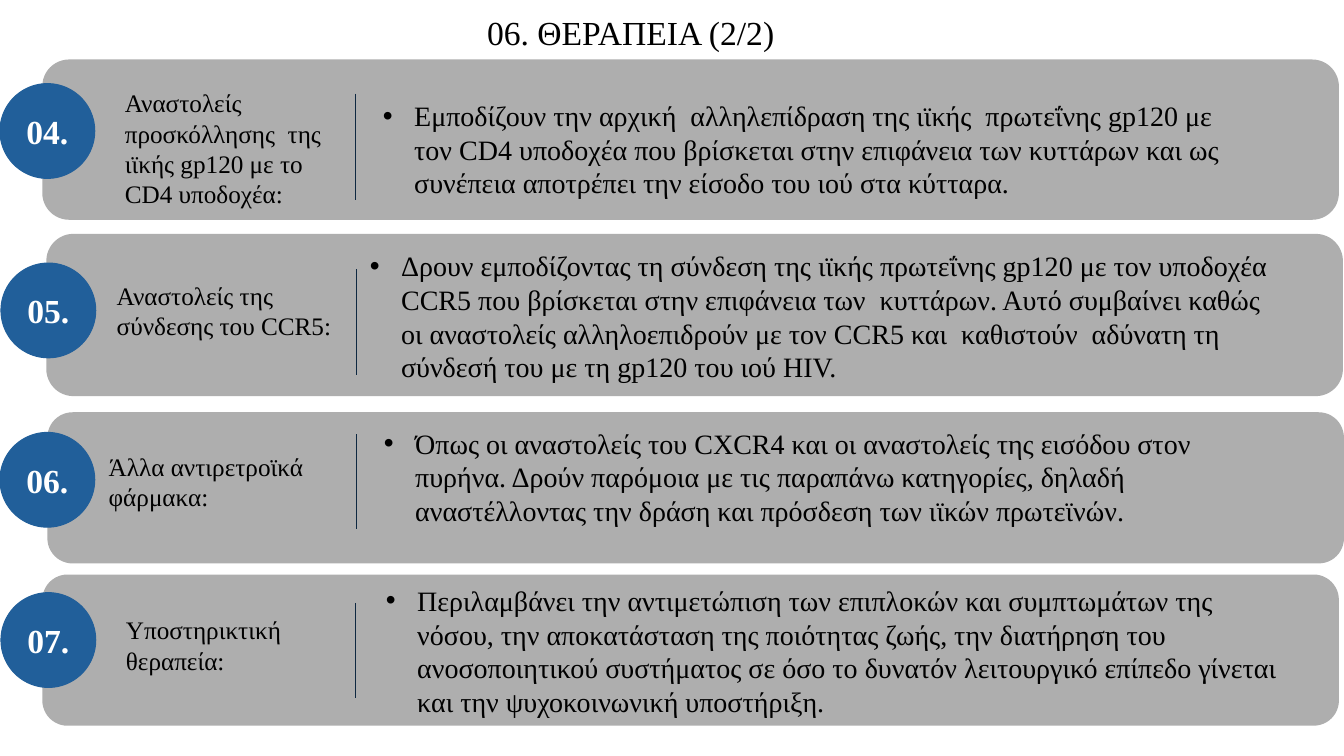
from dataclasses import dataclass

from lxml import etree
from pptx import Presentation
from pptx.dml.color import RGBColor
from pptx.enum.shapes import MSO_CONNECTOR, MSO_SHAPE
from pptx.enum.text import MSO_ANCHOR, PP_ALIGN
from pptx.oxml.ns import qn
from pptx.slide import Slide
from pptx.text.text import TextFrame
from pptx.util import Inches, Pt

ROUNDED = MSO_SHAPE.ROUNDED_RECTANGLE
OVAL = MSO_SHAPE.OVAL
STRAIGHT = MSO_CONNECTOR.STRAIGHT
TOP, MIDDLE = MSO_ANCHOR.TOP, MSO_ANCHOR.MIDDLE
LEFT, CENTER = PP_ALIGN.LEFT, PP_ALIGN.CENTER


@dataclass(frozen=True)
class Theme:
    font: str = "Times New Roman"
    heading_size: int = 24
    label_size: int = 18
    body_size: int = 20
    text: RGBColor = RGBColor(0, 0, 0)
    badge_text: RGBColor = RGBColor(0xFF, 0xFF, 0xFF)
    badge: RGBColor = RGBColor(0x21, 0x5F, 0x9A)
    bar: RGBColor = RGBColor(0xAE, 0xAE, 0xAE)
    divider: RGBColor = RGBColor(0x0E, 0x28, 0x41)


@dataclass(frozen=True)
class Box:
    left: float
    top: float
    width: float
    height: float

    def lengths(self) -> tuple[int, int, int, int]:
        return (Inches(self.left), Inches(self.top),
                Inches(self.width), Inches(self.height))


@dataclass(frozen=True)
class Therapy:
    number: str
    label: str
    description: str
    bar: Box
    badge: Box
    label_box: Box
    description_box: Box
    divider: Box


THEME = Theme()
BAR_WIDTH = 12.86
BADGE_SIZE = 0.94
BULLET_INDENT = 0.31

THERAPIES = [
    Therapy(
        "04.",
        "Αναστολείς προσκόλλησης  της ιϊκής gp120 με το CD4 υποδοχέα:",
        "Εμποδίζουν την αρχική  αλληλεπίδραση της ιϊκής  πρωτεΐνης gp120 με "
        "τον CD4 υποδοχέα που βρίσκεται στην επιφάνεια των κυττάρων και ως "
        "συνέπεια αποτρέπει την είσοδο του ιού στα κύτταρα.",
        Box(0.42, 0.59, BAR_WIDTH, 1.59), Box(0, 0.83, BADGE_SIZE, BADGE_SIZE),
        Box(1.14, 0.82, 2.43, 1.3), Box(3.7, 0.93, 8.8, 1.1),
        Box(3.53, 0.93, 0, 1.05)),
    Therapy(
        "05.",
        "Αναστολείς της σύνδεσης του CCR5:",
        "Δρουν εμποδίζοντας τη σύνδεση της ιϊκής πρωτεΐνης gp120 με τον "
        "υποδοχέα CCR5 που βρίσκεται στην επιφάνεια των  κυττάρων. Αυτό "
        "συμβαίνει καθώς οι αναστολείς αλληλοεπιδρούν με τον CCR5 και  "
        "καθιστούν  αδύνατη τη σύνδεσή του με τη gp120 του ιού HIV.",
        Box(0.46, 2.32, BAR_WIDTH, 1.61), Box(0.01, 2.61, BADGE_SIZE, BADGE_SIZE),
        Box(1.06, 2.73, 2.5, 0.7), Box(3.57, 2.42, 9.27, 1.45),
        Box(3.54, 2.67, 0, 1.05)),
    Therapy(
        "06.",
        "Άλλα αντιρετροϊκά φάρμακα:",
        "Όπως οι αναστολείς του CXCR4 και οι αναστολείς της εισόδου στον "
        "πυρήνα. Δρούν παρόμοια με τις παραπάνω κατηγορίες, δηλαδή "
        "αναστέλλοντας την δράση και πρόσδεση των ιϊκών πρωτεϊνών.",
        Box(0.47, 4.09, BAR_WIDTH, 1.5), Box(0, 4.29, BADGE_SIZE, BADGE_SIZE),
        Box(0.98, 4.43, 2.22, 0.7), Box(3.71, 4.18, 9.04, 1.1),
        Box(3.54, 4.31, 0, 0.94)),
    Therapy(
        "07.",
        "Υποστηρικτική θεραπεία:",
        "Περιλαμβάνει την αντιμετώπιση των επιπλοκών και συμπτωμάτων της "
        "νόσου, την αποκατάσταση της ποιότητας ζωής, την διατήρηση του "
        "ανοσοποιητικού συστήματος σε όσο το δυνατόν λειτουργικό επίπεδο "
        "γίνεται και την ψυχοκοινωνική υποστήριξη.",
        Box(0.42, 5.7, BAR_WIDTH, 1.5), Box(0.01, 5.88, BADGE_SIZE, BADGE_SIZE),
        Box(1.15, 6.05, 2.42, 0.7), Box(3.73, 5.74, 9.1, 1.45),
        Box(3.53, 5.98, 0, 0.94)),
]


def write_text(text_frame: TextFrame, text: str, size: int, color: RGBColor,
               alignment: PP_ALIGN = LEFT, anchor: MSO_ANCHOR = TOP,
               bold: bool = False, bullet: bool = False) -> None:
    text_frame.word_wrap = True
    text_frame.vertical_anchor = anchor
    text_frame.text = text
    paragraph = text_frame.paragraphs[0]
    paragraph.alignment = alignment
    if bullet:
        properties = paragraph._p.get_or_add_pPr()
        properties.set("marL", str(Inches(BULLET_INDENT)))
        properties.set("indent", str(-Inches(BULLET_INDENT)))
        etree.SubElement(properties, qn("a:buFont")).set("typeface", "Arial")
        etree.SubElement(properties, qn("a:buChar")).set("char", "•")
    font = paragraph.runs[0].font
    font.name = THEME.font
    font.size = Pt(size)
    font.bold = bold
    font.color.rgb = color


def add_text(slide: Slide, box: Box, text: str, size: int,
             alignment: PP_ALIGN = LEFT, bullet: bool = False) -> None:
    text_box = slide.shapes.add_textbox(*box.lengths())
    write_text(text_box.text_frame, text, size, THEME.text, alignment,
               bullet=bullet)


def add_bar(slide: Slide, box: Box) -> None:
    shape = slide.shapes.add_shape(ROUNDED, *box.lengths())
    shape.adjustments[0] = 0.167
    shape.shadow.inherit = False
    shape.fill.solid()
    shape.fill.fore_color.rgb = THEME.bar
    shape.line.fill.background()


def add_badge(slide: Slide, box: Box, number: str) -> None:
    shape = slide.shapes.add_shape(OVAL, *box.lengths())
    shape.shadow.inherit = False
    shape.fill.solid()
    shape.fill.fore_color.rgb = THEME.badge
    shape.line.color.rgb = THEME.badge
    shape.line.width = Pt(0.75)
    write_text(shape.text_frame, number, THEME.heading_size, THEME.badge_text,
               CENTER, MIDDLE, bold=True)


def add_divider(slide: Slide, box: Box) -> None:
    left, top, width, height = box.lengths()
    line = slide.shapes.add_connector(STRAIGHT, left, top, left + width, top + height)
    line.line.color.rgb = THEME.divider
    line.line.width = Pt(0.75)
    etree.SubElement(line._element.spPr, qn("a:effectLst"))


def add_therapy(slide: Slide, therapy: Therapy) -> None:
    add_bar(slide, therapy.bar)
    add_badge(slide, therapy.badge, therapy.number)
    add_text(slide, therapy.label_box, therapy.label, THEME.label_size)
    add_divider(slide, therapy.divider)
    add_text(slide, therapy.description_box, therapy.description,
             THEME.body_size, bullet=True)


def main() -> None:
    presentation = Presentation()
    presentation.slide_width = Inches(13.33)
    presentation.slide_height = Inches(7.5)
    slide = presentation.slides.add_slide(presentation.slide_layouts[6])

    # Title
    add_text(slide, Box(0.25, 0.07, 12.01, 0.5), "06. ΘΕΡΑΠΕΙΑ (2/2)",
             THEME.heading_size, CENTER)

    # One row for each therapy
    for therapy in THERAPIES:
        add_therapy(slide, therapy)

    presentation.save("out.pptx")


if __name__ == "__main__":
    main()
